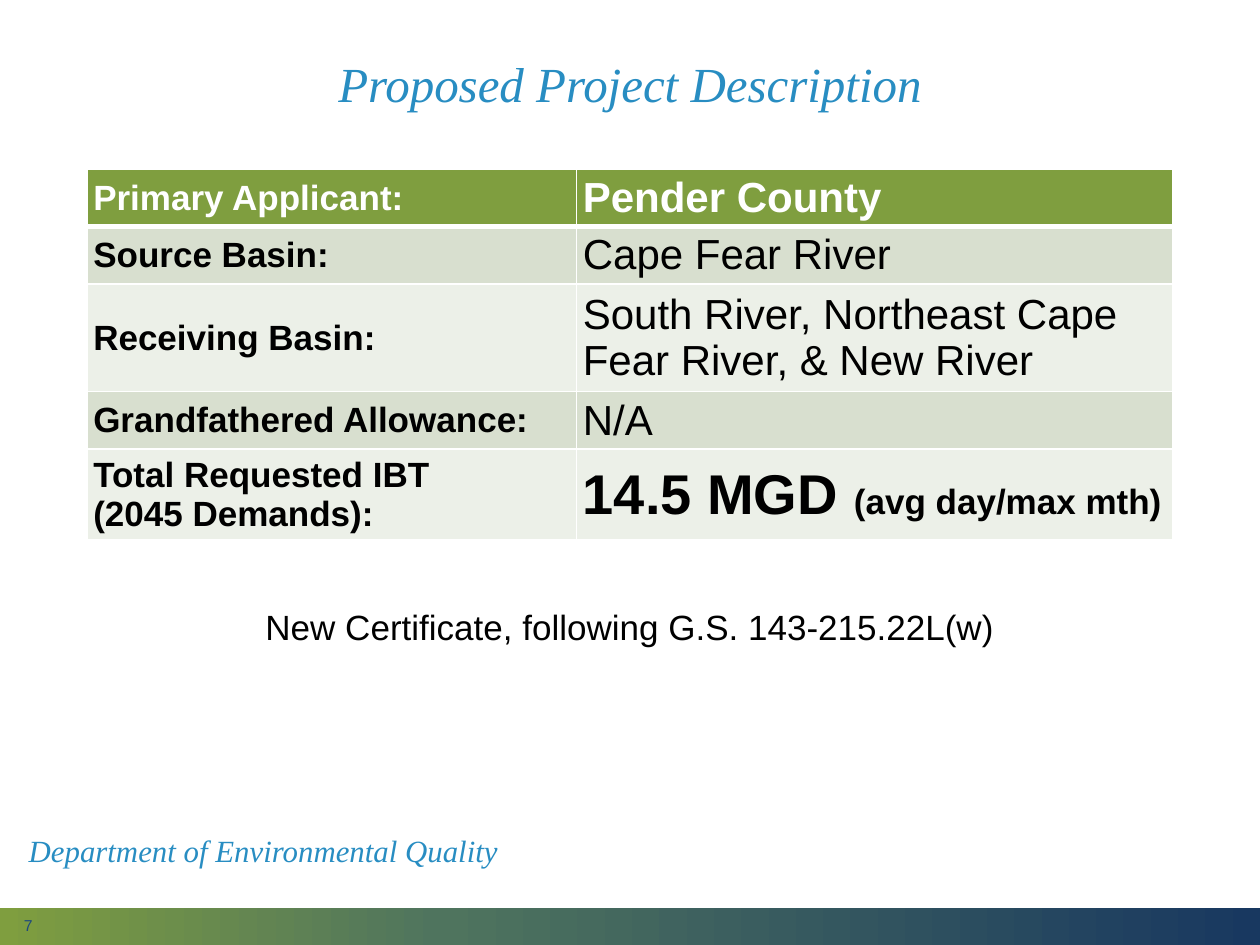
import copy

import lxml.etree
import pptx
import pptx.dml.color
import pptx.enum.shapes
import pptx.enum.text
import pptx.oxml.ns
import pptx.util

Cm, Pt = pptx.util.Cm, pptx.util.Pt
RGB = pptx.dml.color.RGBColor
ALIGN = pptx.enum.text.PP_ALIGN
MIDDLE = pptx.enum.text.MSO_ANCHOR.MIDDLE

GREEN = RGB(0x7F, 0x9E, 0x3F)
TEAL = RGB(0x4F, 0x74, 0x5E)
NAVY = RGB(0x18, 0x38, 0x60)
BLUE = RGB(0x28, 0x8D, 0xC2)
SLATE = RGB(0x1F, 0x49, 0x7D)
SAGE = RGB(0xD8, 0xDF, 0xCF)
PALE = RGB(0xEC, 0xF0, 0xE8)
WHITE = RGB(0xFF, 0xFF, 0xFF)
BLACK = RGB(0, 0, 0)
SANS, SERIF = "Arial", "Times New Roman"

LEFT, WIDTH = Cm(1.75), Cm(21.9)
LABELS = ["Primary Applicant:", "Source Basin:", "Receiving Basin:",
          "Grandfathered Allowance:", "Total Requested IBT\n(2045 Demands):"]
VALUES = ["Pender County", "Cape Fear River",
          "South River, Northeast Cape Fear River, & New River", "N/A", "14.5 MGD "]


def style(run, size, color, face=SANS, bold=False, italic=False):
    font = run.font
    font.size, font.name = Pt(size), face
    font.bold, font.italic = bold, italic
    font.color.rgb = color


def write(frame, text, size, color, align=ALIGN.LEFT, space=1.0, **look):
    frame.text = text
    frame.word_wrap = True
    for para in frame.paragraphs:
        para.alignment = align
        para.line_spacing = space
        for run in para.runs:
            style(run, size, color, **look)


def add_text(slide, box, text, size, color, anchor=MIDDLE, **look):
    frame = slide.shapes.add_textbox(*box).text_frame
    write(frame, text, size, color, **look)
    frame.vertical_anchor = anchor


def add_bar(slide, width):
    bar = slide.shapes.add_shape(pptx.enum.shapes.MSO_SHAPE.RECTANGLE,
                                 0, Cm(18.31), width, Cm(0.74))
    bar.shadow.inherit = False
    bar.line.fill.background()
    bar.fill.gradient()
    bar.fill.gradient_angle = 0
    stops = bar._element.spPr.find(".//" + pptx.oxml.ns.qn("a:gsLst"))
    stops.append(copy.deepcopy(stops[-1]))
    for stop, place, color in zip(bar.fill.gradient_stops, (0, 0.35, 1), (GREEN, TEAL, NAVY)):
        stop.position = place
        stop.color.rgb = color


def edge(cell, top, bottom):
    """Draw white cell borders; top and bottom are widths in points."""
    props = cell._tc.get_or_add_tcPr()
    for spot, (side, width) in enumerate(zip("LRTB", (1, 1, top, bottom))):
        line = lxml.etree.Element(pptx.oxml.ns.qn("a:ln" + side), w=str(Pt(width)))
        fill = lxml.etree.SubElement(line, pptx.oxml.ns.qn("a:solidFill"))
        lxml.etree.SubElement(fill, pptx.oxml.ns.qn("a:srgbClr"), val=str(WHITE))
        props.insert(spot, line)


def add_facts(slide):
    count = len(LABELS)
    table = slide.shapes.add_table(count, 2, LEFT, Cm(3.41), WIDTH, Cm(1.04) * count).table
    table.columns[0].width = Cm(9.87)
    table.columns[1].width = WIDTH - Cm(9.87)
    for row, pair in enumerate(zip(LABELS, VALUES)):
        head, last = row == 0, row == count - 1
        for col, text in enumerate(pair):
            cell = table.cell(row, col)
            size = 20 if col == 0 else 32 if last else 24
            write(cell.text_frame, text, size, WHITE if head else BLACK,
                  bold=col == 0 or head or last)
            cell.vertical_anchor = MIDDLE
            cell.margin_left = cell.margin_right = Cm(0.13)
            cell.margin_top = cell.margin_bottom = Cm(0.07)
            cell.fill.solid()
            cell.fill.fore_color.rgb = GREEN if head else SAGE if row % 2 else PALE
            edge(cell, 3 if row == 1 else 1, 3 if head else 1)
    note = table.cell(count - 1, 1).text_frame.paragraphs[0].add_run()
    note.text = "(avg day/max mth)"
    style(note, 20, BLACK, bold=True)


def main():
    deck = pptx.Presentation()
    deck.slide_width, deck.slide_height = Cm(25.4), Cm(19.05)
    slide = deck.slides.add_slide(deck.slide_layouts[5])
    add_bar(slide, deck.slide_width)

    title = slide.shapes.title
    title.left, title.top, title.width, title.height = LEFT, Cm(0.28), WIDTH, Cm(2.95)
    write(title.text_frame, "Proposed Project Description", 28, BLUE,
          align=ALIGN.CENTER, space=0.9, face=SERIF, italic=True)
    title.text_frame.vertical_anchor = MIDDLE

    add_text(slide, (Cm(0.23), Cm(18.47), Cm(5.72), Cm(0.38)), "7", 9, SLATE)
    add_facts(slide)
    add_text(slide, (Cm(0.33), Cm(16.66), Cm(10.41), Cm(1.04)),
             "Department of Environmental Quality", 17.6, BLUE,
             space=0.9, face=SERIF, italic=True)
    add_text(slide, (LEFT, Cm(12.17), WIDTH, Cm(1.52)),
             "New Certificate, following G.S. 143-215.22L(w)", 20, BLACK,
             anchor=pptx.enum.text.MSO_ANCHOR.TOP, align=ALIGN.CENTER, space=0.9)
    deck.save("out.pptx")


if __name__ == "__main__":
    main()
